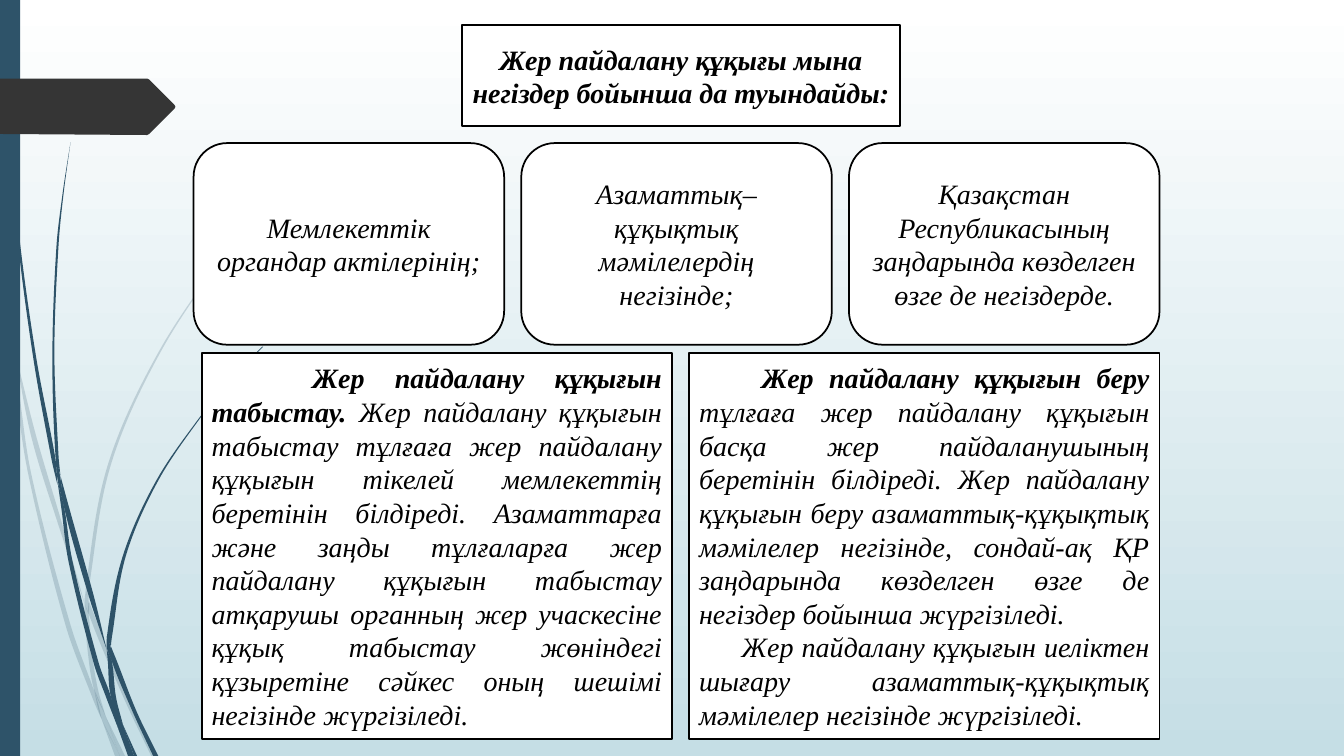
from dataclasses import dataclass

import lxml.etree
import pptx
import pptx.dml.color
import pptx.enum.shapes
import pptx.enum.text
import pptx.oxml.ns
import pptx.util

Inches = pptx.util.Inches
Pt = pptx.util.Pt
RGBColor = pptx.dml.color.RGBColor
MSO_SHAPE = pptx.enum.shapes.MSO_SHAPE
PP_ALIGN = pptx.enum.text.PP_ALIGN
qn = pptx.oxml.ns.qn


@dataclass(frozen=True)
class Theme:
    font: str = "Times New Roman"
    size: float = 20
    border: float = 1.25
    text: RGBColor = RGBColor(0, 0, 0)
    paper: RGBColor = RGBColor(255, 255, 255)
    sky: RGBColor = RGBColor(0xC5, 0xDE, 0xE5)
    accent: RGBColor = RGBColor(0x2E, 0x53, 0x69)
    arrow: RGBColor = RGBColor(0x35, 0x35, 0x35)


THEME = Theme()
GAP = 0.17
UNITS = 1000

# Each strand row holds height, left edge and right edge.
PALE_STRANDS = [
    [(2.82, 0, 0), (2.99, 0, 0.04), (3.22, 0.05, 0.09), (3.5, 0.11, 0.11)],
    [(3.45, 0.14, 0.14), (4.33, 0.31, 0.36), (5.21, 0.58, 0.62), (5.99, 0.84, 0.84)],
    [(5.96, 0.88, 0.88), (6.09, 0.88, 0.93), (6.93, 1.23, 1.27), (7.5, 1.5, 1.55)],
    [(7.11, 1.05, 1.05), (7.5, 1.19, 1.24)],
    [(3.5, 0.11, 0.11), (3.76, 0.14, 0.17), (4.7, 0.28, 0.31), (6.2, 0.65, 0.7),
     (6.93, 0.92, 0.96), (7.14, 1.01, 1.01)],
    [(5.99, 0.84, 0.84), (6.1, 0.84, 0.88), (6.46, 0.87, 0.91), (6.83, 0.93, 0.97),
     (7.11, 1.05, 1.05)],
    [(1.53, 3.12, 3.12), (1.97, 2.68, 2.69), (2.45, 2.28, 2.29), (3.48, 1.58, 1.6),
     (4.61, 1.07, 1.1), (5.84, 0.85, 0.88), (5.96, 0.88, 0.88)],
    [(7.14, 1.01, 1.01), (7.5, 1.14, 1.19)],
    [(5.86, 0.85, 0.85), (5.98, 0.84, 0.88), (6.1, 0.88, 0.88)],
    [(6.83, 0.93, 0.93), (7.11, 1, 1.05), (7.5, 1.19, 1.19)],
]
DARK_STRANDS = [
    [(0, 0.03, 0.04), (1.1, 0.07, 0.08), (2.33, 0.17, 0.19), (3.55, 0.33, 0.36),
     (4.55, 0.51, 0.55), (4.81, 0.57, 0.57)],
    [(4.72, 0.6, 0.6), (5.05, 0.64, 0.69), (5.91, 0.88, 0.93), (6.45, 1.06, 1.06)],
    [(6.41, 1.1, 1.1), (6.56, 1.11, 1.16), (7.07, 1.32, 1.36), (7.5, 1.52, 1.57)],
    [(4.77, 0.57, 0.57), (5.05, 0.61, 0.64), (5.57, 0.68, 0.72), (6.58, 0.93, 0.98),
     (6.91, 1.05, 1.1), (7.22, 1.17, 1.17)],
    [(1.41, 0.7, 0.7), (1.93, 0.62, 0.63), (2.45, 0.56, 0.58), (3.49, 0.52, 0.54),
     (4.51, 0.55, 0.58), (4.72, 0.6, 0.6)],
    [(7.19, 1.22, 1.22), (7.5, 1.33, 1.36)],
    [(4.49, 0.55, 0.55), (4.75, 0.57, 0.6), (5.05, 0.64, 0.64)],
    [(3.44, 2.6, 2.61), (3.74, 2.3, 2.31), (4.06, 2.04, 2.05), (4.75, 1.56, 1.58),
     (5.51, 1.22, 1.25), (6.32, 1.06, 1.11), (6.41, 1.1, 1.1)],
    [(7.22, 1.17, 1.17), (7.5, 1.27, 1.31)],
    [(6.45, 1.06, 1.06), (6.56, 1.07, 1.11), (6.91, 1.1, 1.15), (7.19, 1.22, 1.22)],
    [(6.31, 1.06, 1.06), (6.43, 1.06, 1.1), (6.56, 1.11, 1.11)],
    [(6.91, 1.1, 1.1), (7.19, 1.16, 1.22), (7.5, 1.3, 1.33)],
]
ARROW = [(0, 0.78), (1.46, 0.78), (1.48, 0.79), (1.73, 1.04), (1.74, 1.06),
         (1.73, 1.08), (1.48, 1.33), (1.46, 1.34), (0, 1.33)]

TITLE = "Жер пайдалану құқығы мына негіздер бойынша да туындайды:"
GROUNDS = [
    "Мемлекеттік органдар актілерінің;",
    "Азаматтық–құқықтық мәмілелердің негізінде;",
    "Қазақстан Республикасының заңдарында көзделген өзге де негіздерде.",
]
EXPLANATIONS = [
    [(1.0, "Жер пайдалану құқығын табыстау.",
      " Жер пайдалану құқығын табыстау тұлғаға жер пайдалану құқығын тікелей "
      "мемлекеттің беретінін білдіреді. Азаматтарға және заңды тұлғаларға жер "
      "пайдалану құқығын табыстау атқарушы органның жер учаскесіне құқық табыстау "
      "жөніндегі құзыретіне сәйкес оның шешімі негізінде жүргізіледі.")],
    [(0.62, "Жер пайдалану құқығын беру ",
      "тұлғаға жер пайдалану құқығын басқа жер пайдаланушының беретінін білдіреді. "
      "Жер пайдалану құқығын беру азаматтық-құқықтық мәмілелер негізінде, сондай-ақ "
      "ҚР заңдарында көзделген өзге де негіздер бойынша жүргізіледі."),
     (0.42, "",
      "Жер пайдалану құқығын иеліктен шығару азаматтық-құқықтық мәмілелер "
      "негізінде жүргізіледі.")],
]


def paint(shape, color):
    shape.shadow.inherit = False
    shape.fill.solid()
    shape.fill.fore_color.rgb = color
    shape.line.fill.background()


def add_outline(slide, points, color):
    scaled = [(x * UNITS, y * UNITS) for x, y in points]
    builder = slide.shapes.build_freeform(*scaled[0], scale=Inches(1) / UNITS)
    builder.add_line_segments(scaled[1:], close=True)
    shape = builder.convert_to_shape()
    paint(shape, color)
    return shape


def curve_points(rows, side):
    points = [(row[side], row[0]) for row in rows]
    last = len(points) - 1
    slopes = []
    for index in range(len(points)):
        before, after = points[max(index - 1, 0)], points[min(index + 1, last)]
        slopes.append((after[0] - before[0]) / (after[1] - before[1]))
    edge = points[:1]
    for index in range(last):
        (start, top), (end, bottom) = points[index:index + 2]
        third = (bottom - top) / 3
        edge += [(start + third * slopes[index], top + third),
                 (end - third * slopes[index + 1], bottom - third),
                 (end, bottom)]
    return edge


def add_strand(slide, rows, opacity):
    left, right = curve_points(rows, 1), curve_points(rows, 2)
    outline = left + [left[-1], right[-1]] + right[::-1]
    strand = add_outline(slide, outline, THEME.accent)
    path = strand._element.find(".//" + qn("a:path"))
    lines = path.findall(qn("a:lnTo"))
    for index in range(0, len(lines), 3):
        curve = lxml.etree.SubElement(path, qn("a:cubicBezTo"))
        for line in lines[index:index + 3]:
            curve.append(line[0])
            path.remove(line)
    path.append(path.find(qn("a:close")))
    if opacity < 100:
        color = strand._element.spPr.find(".//" + qn("a:srgbClr"))
        lxml.etree.SubElement(color, qn("a:alpha")).set("val", str(opacity * 1000))


def add_backdrop(slide, height):
    fill = slide.background.fill
    fill.gradient()
    fill.gradient_angle = 270
    for stop, color, position in zip(fill.gradient_stops, (THEME.paper, THEME.sky), (0, 1)):
        stop.color.rgb = color
        stop.position = position
    for strands, opacity in ((PALE_STRANDS, 20), (DARK_STRANDS, 100)):
        for rows in strands:
            add_strand(slide, rows, opacity)
    bar = slide.shapes.add_shape(MSO_SHAPE.RECTANGLE, 0, 0, Inches(0.2), Inches(height))
    paint(bar, THEME.accent)
    add_outline(slide, ARROW, THEME.arrow)


def style_box(shape):
    paint(shape, THEME.paper)
    shape.line.color.rgb = THEME.text
    shape.line.width = Pt(THEME.border)
    frame = shape.text_frame
    frame.word_wrap = True
    frame.auto_size = pptx.enum.text.MSO_AUTO_SIZE.NONE
    frame.vertical_anchor = pptx.enum.text.MSO_ANCHOR.MIDDLE
    return frame


def style_paragraph(paragraph, alignment):
    paragraph.alignment = alignment
    font = paragraph.font
    font.name = THEME.font
    font.size = Pt(THEME.size)
    font.italic = True
    font.color.rgb = THEME.text


def add_title(slide, left, top, width, height):
    title = slide.shapes.title
    title.left, title.top = Inches(left), Inches(top)
    title.width, title.height = Inches(width), Inches(height)
    frame = style_box(title)
    frame.text = TITLE
    style_paragraph(frame.paragraphs[0], PP_ALIGN.CENTER)
    frame.paragraphs[0].font.bold = True


def add_row(slide, kind, count, left, top, width, height):
    box_width = (width - GAP * (count - 1)) / count
    for index in range(count):
        box_left = left + index * (box_width + GAP)
        yield style_box(slide.shapes.add_shape(
            kind, Inches(box_left), Inches(top), Inches(box_width), Inches(height)))


def add_grounds(slide, *box):
    frames = add_row(slide, MSO_SHAPE.ROUNDED_RECTANGLE, len(GROUNDS), *box)
    for frame, ground in zip(frames, GROUNDS):
        frame.text = ground
        style_paragraph(frame.paragraphs[0], PP_ALIGN.CENTER)


def add_explanations(slide, *box):
    frames = add_row(slide, MSO_SHAPE.RECTANGLE, len(EXPLANATIONS), *box)
    for frame, explanation in zip(frames, EXPLANATIONS):
        for index, (indent, term, meaning) in enumerate(explanation):
            paragraph = frame.add_paragraph() if index else frame.paragraphs[0]
            style_paragraph(paragraph, PP_ALIGN.JUSTIFY)
            paragraph._p.get_or_add_pPr().set("indent", str(Inches(indent)))
            if term:
                run = paragraph.add_run()
                run.text = term
                run.font.bold = True
            paragraph.add_run().text = meaning


def main():
    presentation = pptx.Presentation()
    presentation.slide_width, presentation.slide_height = Inches(13.33), Inches(7.5)
    slide = presentation.slides.add_slide(presentation.slide_layouts[5])
    add_backdrop(slide, 7.5)
    add_title(slide, 4.58, 0.25, 4.35, 1)
    add_grounds(slide, 1.92, 1.42, 9.58, 2)
    add_explanations(slide, 2, 3.5, 9.5, 3.83)
    presentation.save("out.pptx")


if __name__ == "__main__":
    main()
